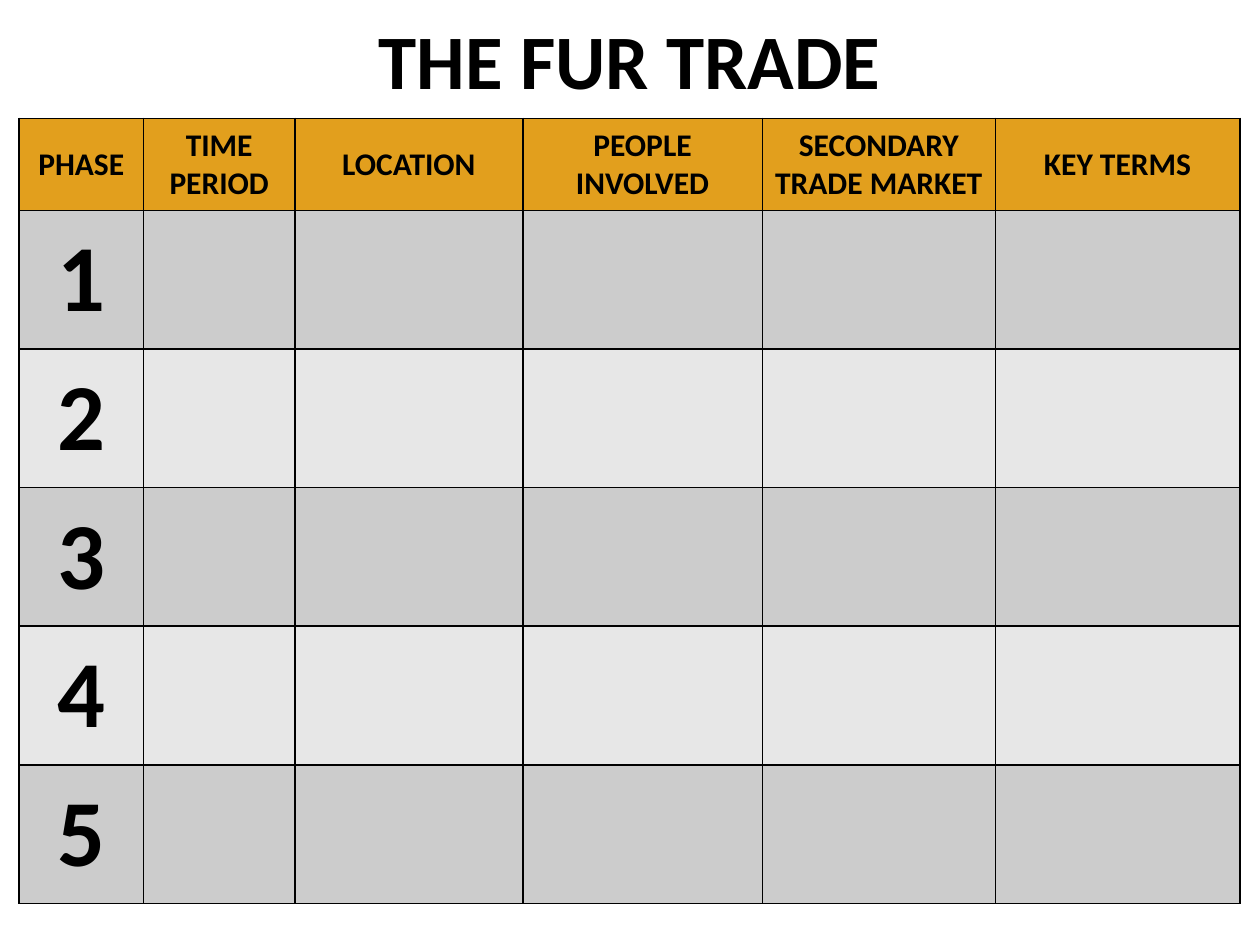
from dataclasses import dataclass

from lxml.etree import SubElement
from pptx import Presentation
from pptx.dml.color import RGBColor
from pptx.enum.text import MSO_ANCHOR, PP_ALIGN
from pptx.oxml.ns import qn
from pptx.util import Inches, Pt

BLACK = RGBColor(0x00, 0x00, 0x00)
GOLD = RGBColor(0xE2, 0x9F, 0x1D)
DARK_BAND = RGBColor(0xCC, 0xCC, 0xCC)
LIGHT_BAND = RGBColor(0xE7, 0xE7, 0xE7)
FONT = "Calibri"
PHASE_COUNT = 5
HEADER_HEIGHT, PHASE_HEIGHT = 0.73, 1.1


@dataclass(frozen=True)
class Column:
    heading: str
    width: float


COLUMNS = [
    Column("PHASE", 0.99),
    Column("TIME PERIOD", 1.2),
    Column("LOCATION", 1.81),
    Column("PEOPLE INVOLVED", 1.9),
    Column("SECONDARY TRADE MARKET", 1.85),
    Column("KEY TERMS", 1.94),
]


def write_centred(text_frame, text: str, size: float) -> None:
    paragraph = text_frame.paragraphs[0]
    paragraph.alignment = PP_ALIGN.CENTER
    run = paragraph.add_run()
    run.text = text
    run.font.name = FONT
    run.font.size = Pt(size)
    run.font.bold = True
    run.font.color.rgb = BLACK


def add_borders(cell) -> None:
    """Draw the four cell edges; call before the fill, which must follow them."""
    properties = cell._tc.get_or_add_tcPr()
    for edge in ("a:lnL", "a:lnR", "a:lnT", "a:lnB"):
        line = SubElement(properties, qn(edge), w=str(Pt(1)))
        fill = SubElement(line, qn("a:solidFill"))
        SubElement(fill, qn("a:srgbClr"), val=str(BLACK))


def format_cell(cell, color: RGBColor, text: str, size: float) -> None:
    add_borders(cell)
    cell.fill.solid()
    cell.fill.fore_color.rgb = color
    cell.vertical_anchor = MSO_ANCHOR.MIDDLE
    if text:
        write_centred(cell.text_frame, text, size)


def add_title(slide, text: str) -> None:
    title = slide.shapes.title
    title.left, title.top = Inches(0.75), Inches(0.09)
    title.width, title.height = Inches(8.5), Inches(0.75)
    title.text_frame.vertical_anchor = MSO_ANCHOR.MIDDLE
    write_centred(title.text_frame, text, 44)


def add_phase_table(slide) -> None:
    width = sum(column.width for column in COLUMNS)
    height = HEADER_HEIGHT + PHASE_COUNT * PHASE_HEIGHT
    table = slide.shapes.add_table(
        PHASE_COUNT + 1, len(COLUMNS),
        Inches(0.15), Inches(0.94), Inches(width), Inches(height),
    ).table

    table.rows[0].height = Inches(HEADER_HEIGHT)
    for index, column in enumerate(COLUMNS):
        table.columns[index].width = Inches(column.width)
        format_cell(table.cell(0, index), GOLD, column.heading, 18)

    for phase in range(1, PHASE_COUNT + 1):
        table.rows[phase].height = Inches(PHASE_HEIGHT)
        band = DARK_BAND if phase % 2 else LIGHT_BAND
        for index in range(len(COLUMNS)):
            text = str(phase) if index == 0 else ""
            format_cell(table.cell(phase, index), band, text, 54)


def main() -> None:
    presentation = Presentation()
    presentation.slide_width = Inches(10)
    presentation.slide_height = Inches(7.5)
    title_only = presentation.slide_layouts[5]
    slide = presentation.slides.add_slide(title_only)
    add_title(slide, "THE FUR TRADE")
    add_phase_table(slide)
    presentation.save("out.pptx")


if __name__ == "__main__":
    main()
